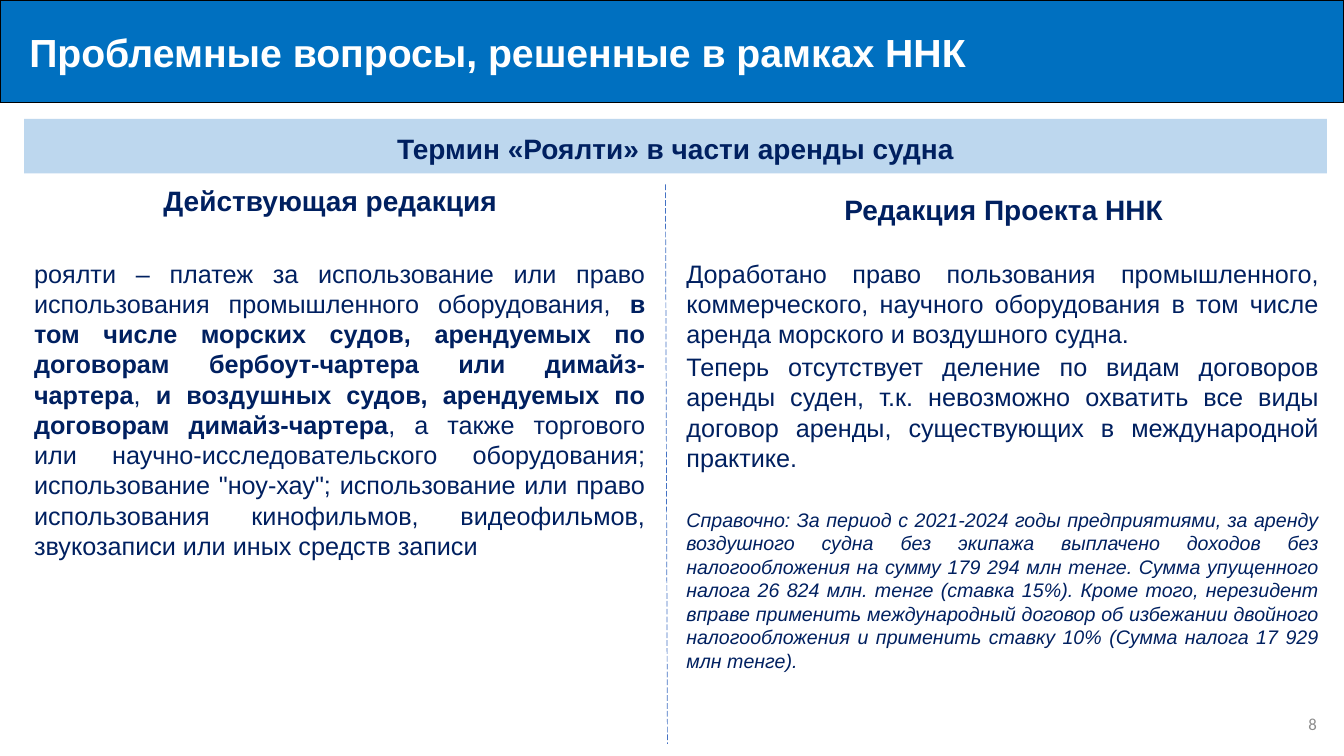
from lxml import etree
from pptx import Presentation
from pptx.dml.color import RGBColor
from pptx.enum.dml import MSO_LINE
from pptx.enum.shapes import MSO_CONNECTOR, MSO_SHAPE
from pptx.enum.text import MSO_ANCHOR, PP_ALIGN
from pptx.oxml.ns import qn
from pptx.util import Inches, Pt

LEFT, CENTER, RIGHT, JUSTIFY = PP_ALIGN.LEFT, PP_ALIGN.CENTER, PP_ALIGN.RIGHT, PP_ALIGN.JUSTIFY
TOP, MIDDLE = MSO_ANCHOR.TOP, MSO_ANCHOR.MIDDLE
STRAIGHT = MSO_CONNECTOR.STRAIGHT
RECTANGLE = MSO_SHAPE.RECTANGLE
LONG_DASH = MSO_LINE.LONG_DASH

BLUE, PALE_BLUE, NAVY = "0070C0", "BDD7EE", "002060"
WHITE, BLACK, GREY, DIVIDER_BLUE = "FFFFFF", "000000", "8C8C8C", "4472C4"

CURRENT_TEXT = [
    ("роялти – платеж за использование или право использования промышленного оборудования, ", False),
    ("в том числе морских судов, арендуемых по договорам бербоут-чартера или димайз-чартера", True),
    (", ", False),
    ("и воздушных судов, арендуемых по договорам димайз-чартера", True),
    (", а также торгового или научно-исследовательского оборудования; использование \"ноу-хау\"; "
     "использование или право использования кинофильмов, видеофильмов, звукозаписи или иных "
     "средств записи", False),
]
DRAFT_TEXT = [
    "Доработано право пользования промышленного, коммерческого, научного оборудования в том числе "
    "аренда морского и воздушного судна.",
    "Теперь отсутствует деление по видам договоров аренды суден, т.к. невозможно охватить все виды "
    "договор аренды, существующих в международной практике.",
]
REFERENCE_TEXT = (
    "Справочно: За период с 2021-2024 годы предприятиями, за аренду воздушного судна без экипажа "
    "выплачено доходов без налогообложения на сумму 179 294 млн тенге. Сумма упущенного налога "
    "26 824 млн. тенге (ставка 15%). Кроме того, нерезидент вправе применить международный договор "
    "об избежании двойного налогообложения и применить ставку 10% (Сумма налога 17 929 млн тенге)."
)


def rgb(value):
    return RGBColor.from_string(value)


def set_frame(sp, anchor=TOP):
    tf = sp.text_frame
    tf.word_wrap = True
    tf.vertical_anchor = anchor
    return tf


def add_box(s, box, anchor=TOP):
    return set_frame(s.shapes.add_textbox(*map(Inches, box)), anchor)


def write(tf, text, size=18, color=NAVY, bold=False, italic=False, font="Arial",
          align=JUSTIFY, spacing=1.0, before=0, after=0):
    """Add a paragraph; text is a string or a list of (string, bold) runs."""
    p = tf.paragraphs[0]
    if p.runs:
        p = tf.add_paragraph()
    p.alignment = align
    p.line_spacing = spacing
    p.space_before, p.space_after = Pt(before), Pt(after)
    for part, is_bold in [(text, bold)] if isinstance(text, str) else text:
        r = p.add_run()
        r.text = part
        r.font.name, r.font.size = font, Pt(size)
        r.font.bold, r.font.italic = is_bold, italic
        r.font.color.rgb = rgb(color)


def write_heading(tf, text):
    write(tf, text, size=20, bold=True, align=CENTER, spacing=1.14)


def add_title(s, box, text):
    sp = s.shapes.title
    sp.left, sp.top, sp.width, sp.height = map(Inches, box)
    sp.fill.solid()
    sp.fill.fore_color.rgb = rgb(BLUE)
    sp.line.color.rgb = rgb(BLACK)
    sp.line.width = Pt(1)
    tf = set_frame(sp, MIDDLE)
    tf.margin_left = Inches(0.29)
    write(tf, text, size=28, color=WHITE, bold=True, align=LEFT)


def add_topic_band(s, box, text):
    sp = s.shapes.add_shape(RECTANGLE, *map(Inches, box))
    sp.shadow.inherit = False
    sp.fill.solid()
    sp.fill.fore_color.rgb = rgb(PALE_BLUE)
    sp.line.fill.background()
    write_heading(set_frame(sp, MIDDLE), text)


def add_divider(s, start, end):
    line = s.shapes.add_connector(STRAIGHT, *map(Inches, start + end))
    line.line.color.rgb = rgb(DIVIDER_BLUE)
    line.line.width = Pt(0.5)
    line.line.dash_style = LONG_DASH
    etree.SubElement(line._element.spPr, qn("a:effectLst"))


def add_column(s, heading_box, heading, body_box):
    """Place a headed column and return the text frame of its body."""
    write_heading(add_box(s, heading_box), heading)
    return add_box(s, body_box)


def add_page_number(s, box, number):
    write(add_box(s, box, MIDDLE), number, size=12, color=GREY, font="Calibri", align=RIGHT)


def build_comparison_slide(prs):
    s = prs.slides.add_slide(prs.slide_layouts[5])
    add_title(s, (0, 0, 13.33, 1.02), "Проблемные вопросы, решенные в рамках ННК")
    add_topic_band(s, (0.24, 1.18, 12.92, 0.54), "Термин «Роялти» в части аренды судна")
    add_divider(s, (6.6, 1.83), (6.62, 7.38))

    current = add_column(s, (0, 1.72, 6.55, 0.45), "Действующая редакция", (0.24, 2.51, 6.26, 3.13))
    write(current, CURRENT_TEXT)

    draft = add_column(s, (6.62, 1.81, 6.67, 0.45), "Редакция Проекта ННК", (6.71, 2.51, 6.47, 4.26))
    for text in DRAFT_TEXT:
        write(draft, text, after=2)
    write(draft, REFERENCE_TEXT, size=14, italic=True, before=23, after=2)

    add_page_number(s, (10.16, 6.98, 3, 0.4), "8")


def main():
    prs = Presentation()
    prs.slide_width, prs.slide_height = Inches(13.33), Inches(7.5)
    build_comparison_slide(prs)
    prs.save("out.pptx")


if __name__ == "__main__":
    main()
